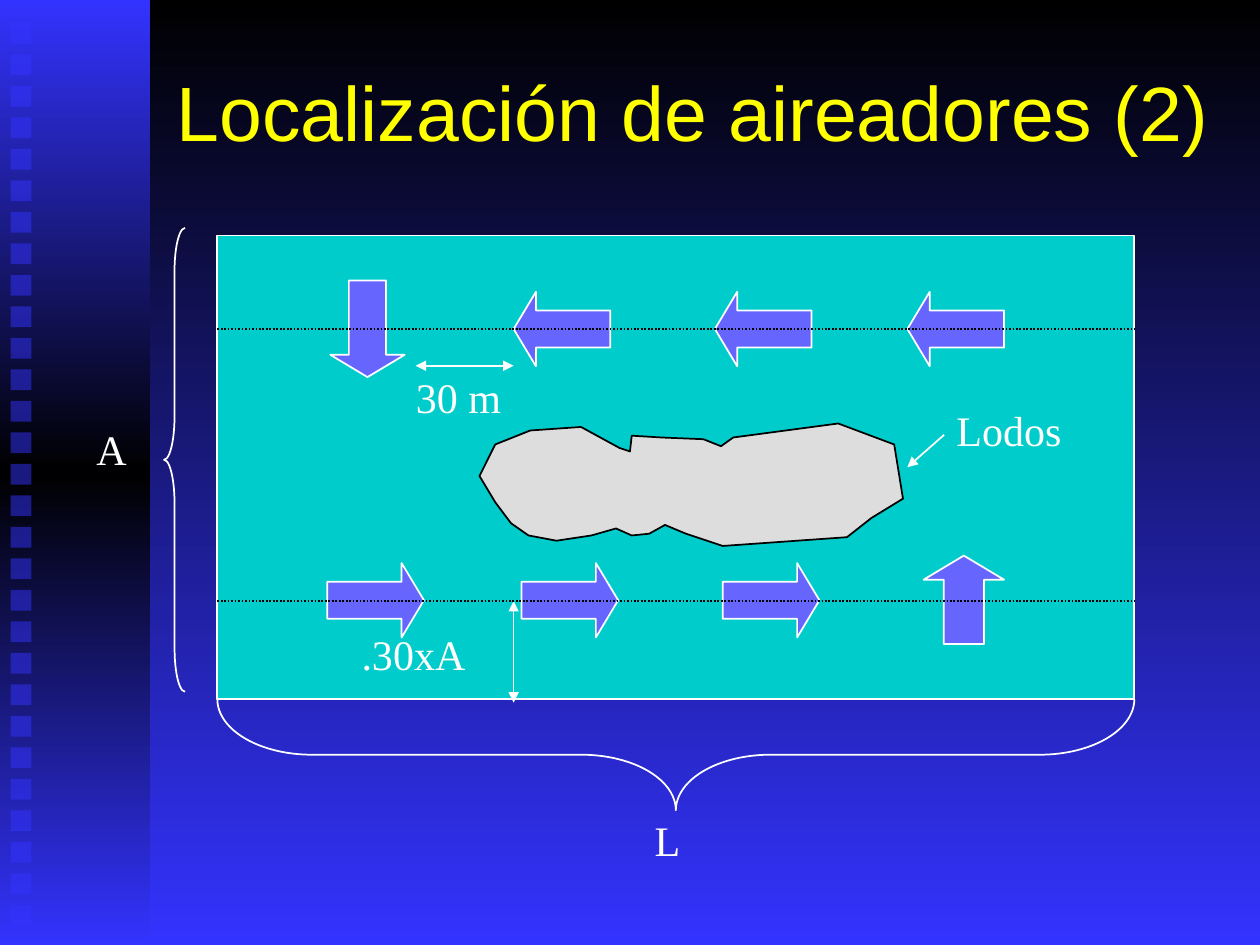
from copy import deepcopy

from pptx import Presentation
from pptx.dml.color import RGBColor
from pptx.enum.dml import MSO_LINE
from pptx.enum.shapes import MSO_CONNECTOR, MSO_SHAPE
from pptx.enum.text import MSO_ANCHOR, MSO_AUTO_SIZE, PP_ALIGN
from pptx.oxml.ns import qn
from pptx.util import Pt
from lxml import etree

RECTANGLE = MSO_SHAPE.RECTANGLE
LEFT, RIGHT = MSO_SHAPE.LEFT_ARROW, MSO_SHAPE.RIGHT_ARROW
UP, DOWN = MSO_SHAPE.UP_ARROW, MSO_SHAPE.DOWN_ARROW
BRACE = MSO_SHAPE.LEFT_BRACE
STRAIGHT = MSO_CONNECTOR.STRAIGHT
DOTTED = MSO_LINE.ROUND_DOT
TOP, MIDDLE = MSO_ANCHOR.TOP, MSO_ANCHOR.MIDDLE
FIXED, GROW = MSO_AUTO_SIZE.NONE, MSO_AUTO_SIZE.SHAPE_TO_FIT_TEXT
ALIGN_LEFT, CENTER = PP_ALIGN.LEFT, PP_ALIGN.CENTER

BLUE, BLACK, WHITE, YELLOW = "3333FF", "000000", "FFFFFF", "FFFF00"
WATER, AERATOR, SLUDGE = "00CCCC", "6666FF", "DDDDDD"

# Outline of the sludge bank, anticlockwise from its top right, in points
SLUDGE_OUTLINE = [
    (479, 242), (419, 250), (412, 255), (402, 251), (378, 249.5), (361, 249),
    (360.5, 258), (354, 256), (332.5, 244), (303, 245.5), (283, 254.5),
    (274, 272), (283, 287), (292, 299), (302, 306.5), (318, 309),
    (338, 305.5), (352, 302), (361, 305.5), (371, 305), (380, 299.5),
    (392, 305), (413, 312.5), (484.5, 307), (498, 296), (516, 285),
    (511, 253.5),
]


def color(hex_code):
    return RGBColor.from_string(hex_code)


class Diagram:
    label_font, title_font = "Times New Roman", "Arial"
    label_size, title_size = 24, 44
    line_width = 1

    def __init__(self, slide):
        self.slide = slide
        self.shapes = slide.shapes

    def gradient(self, fill, root, colors):
        """Fill from top to bottom with evenly spaced colours."""
        fill.gradient()
        fill.gradient_angle = 270
        stops = next(root.iter(qn("a:gsLst")))
        while len(stops) < len(colors):
            stops.append(deepcopy(stops[-1]))
        for i, (stop, hex_code) in enumerate(zip(fill.gradient_stops, colors)):
            stop.position = i / (len(colors) - 1)
            stop.color.rgb = color(hex_code)

    def background(self, colors):
        self.gradient(self.slide.background.fill, self.slide.element, colors)

    def paint(self, shape, fill, line):
        shape.shadow.inherit = False
        if fill:
            shape.fill.solid()
            shape.fill.fore_color.rgb = color(fill)
        else:
            shape.fill.background()
        if line:
            shape.line.color.rgb = color(line)
            shape.line.width = Pt(self.line_width)
        else:
            shape.line.fill.background()

    def shape(self, kind, x, y, width, height, fill=None, line=None,
              adjustments=(), alpha=None):
        shape = self.shapes.add_shape(kind, Pt(x), Pt(y), Pt(width), Pt(height))
        self.paint(shape, fill, line)
        for i, value in enumerate(adjustments):
            shape.adjustments[i] = value
        if alpha is not None:
            tint = next(shape.element.spPr.iter(qn("a:srgbClr")))
            etree.SubElement(tint, qn("a:alpha"), val=str(alpha * 1000))
        return shape

    def band(self, x, y, width, height, colors):
        band = self.shape(RECTANGLE, x, y, width, height)
        self.gradient(band.fill, band.element, colors)

    def aerator(self, kind, x, y, width=55.25, height=42.5):
        self.shape(kind, x, y, width, height, AERATOR, WHITE, (0.5, 0.3))

    def outline(self, points, fill, line):
        builder = self.shapes.build_freeform(*points[0], scale=float(Pt(1)))
        builder.add_line_segments(points[1:], close=True)
        self.paint(builder.convert_to_shape(), fill, line)

    def line(self, x1, y1, x2, y2, line=WHITE, dash=None, arrows=()):
        """Draw a line; arrows names its arrow ends, headEnd before tailEnd."""
        connector = self.shapes.add_connector(STRAIGHT, Pt(x1), Pt(y1), Pt(x2), Pt(y2))
        connector.line.color.rgb = color(line)
        connector.line.width = Pt(self.line_width)
        if dash:
            connector.line.dash_style = dash
        properties = connector.element.spPr
        for end in arrows:
            etree.SubElement(properties.find(qn("a:ln")), qn(f"a:{end}"), type="triangle")
        etree.SubElement(properties, qn("a:effectLst"))

    def text(self, words, x, y, width, height, font, size, ink, align, anchor, fit):
        box = self.shapes.add_textbox(Pt(x), Pt(y), Pt(width), Pt(height))
        frame = box.text_frame
        frame.word_wrap = True
        frame.auto_size = fit
        frame.vertical_anchor = anchor
        paragraph = frame.paragraphs[0]
        paragraph.alignment = align
        run = paragraph.add_run()
        run.text = words
        run.font.name = font
        run.font.size = Pt(size)
        run.font.color.rgb = color(ink)

    def title(self, words):
        self.text(words, 90, 18, 612, 90, self.title_font, self.title_size,
                  YELLOW, CENTER, MIDDLE, FIXED)

    def label(self, words, x, y, width):
        self.text(words, x, y, width, 36, self.label_font, self.label_size,
                  WHITE, ALIGN_LEFT, TOP, GROW)


def main():
    presentation = Presentation()
    presentation.slide_width, presentation.slide_height = Pt(720), Pt(540)
    diagram = Diagram(presentation.slides.add_slide(presentation.slide_layouts[6]))

    diagram.background([BLACK, BLUE])
    diagram.band(0, 0, 85.7, 540, [BLUE, BLACK, BLUE])
    for i in range(29):
        diagram.shape(RECTANGLE, 6, 13 + 18 * i, 12, 12, BLUE, alpha=50)
    diagram.title("Localización de aireadores (2)")

    left, top, length, breadth = 124.2, 134.5, 524, 265
    right, bottom = left + length, top + breadth
    diagram.shape(RECTANGLE, left, top, length, breadth, WATER, WHITE)

    diagram.aerator(DOWN, 188.75, 160.25, 42.5, 55.25)
    for x in (293.5, 408.5, 518.5):
        diagram.aerator(LEFT, x, 166.75)
    for x in (187, 298, 413):
        diagram.aerator(RIGHT, x, 321.75)
    diagram.aerator(UP, 527.75, 317.5, 46, 50.5)

    diagram.shape(BRACE, 93.75, 130.25, 12, breadth, line=WHITE, adjustments=(2.06, 0.5))
    depth = 63.5
    length_brace = diagram.shape(
        BRACE, left + (length - depth) / 2, bottom + (depth - length) / 2,
        depth, length, line=WHITE, adjustments=(0.85, 0.5))
    length_brace.rotation = 270

    both_ends = ("headEnd", "tailEnd")
    diagram.line(293.5, 343.5, 293.5, 401.5, arrows=both_ends)
    diagram.line(237.5, 209, 293.5, 209, arrows=both_ends)
    for y in (343.25, 188):
        diagram.line(left, y, right, y, BLACK, DOTTED)

    diagram.outline(SLUDGE_OUTLINE, SLUDGE, BLACK)
    diagram.line(539.5, 248.5, 518.5, 267, arrows=("tailEnd",))

    for words, x, y, width in (
            ("A", 48, 238.5, 45.5),
            ("L", 367, 462, 42),
            (".30xA", 199.5, 355.5, 98.5),
            ("30 m", 230.5, 209, 87),
            ("Lodos", 539.5, 227.5, 96.5)):
        diagram.label(words, x, y, width)

    presentation.save("out.pptx")


if __name__ == "__main__":
    main()
